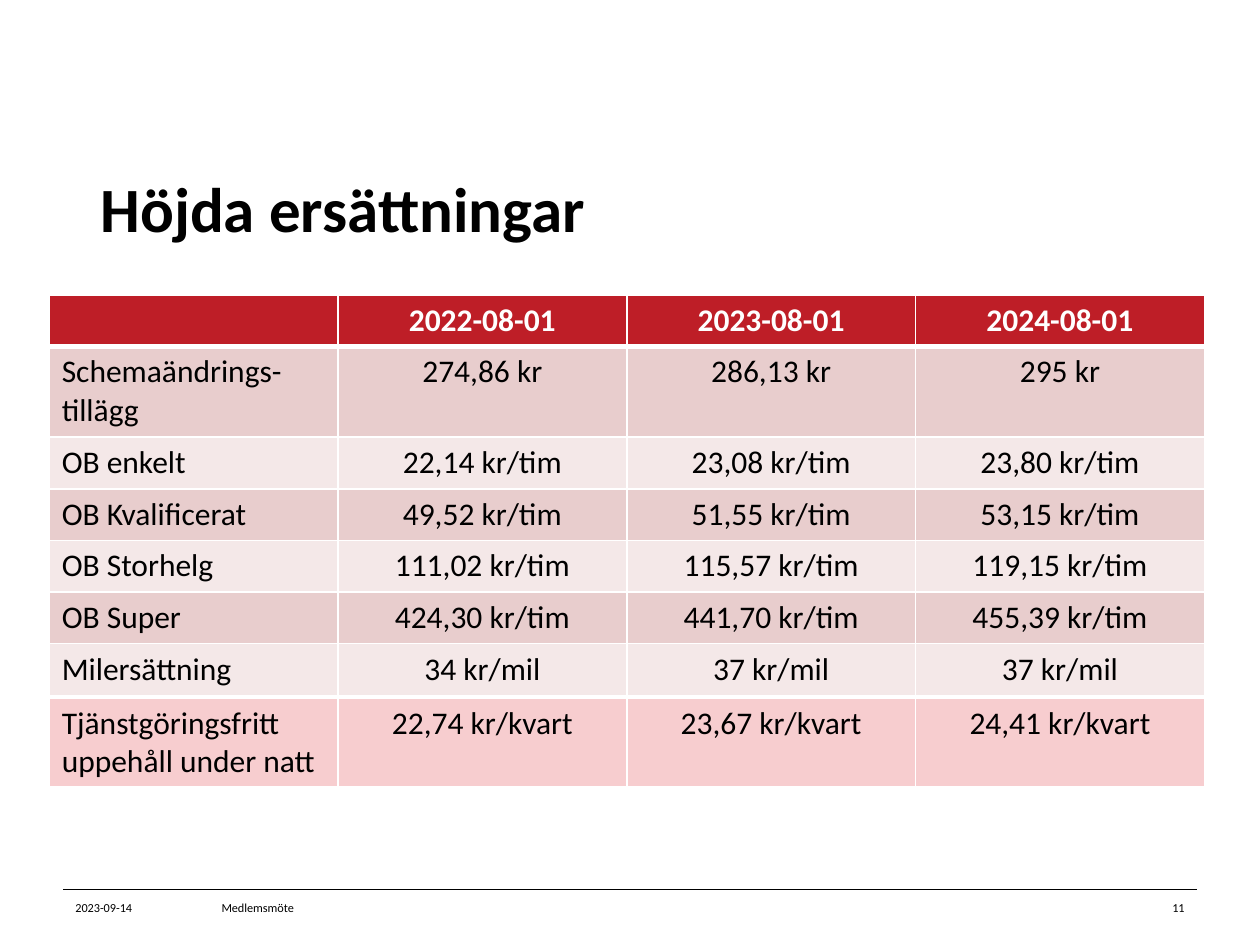
from lxml import etree
from pptx import Presentation
from pptx.dml.color import RGBColor
from pptx.enum.shapes import MSO_CONNECTOR
from pptx.enum.text import MSO_ANCHOR, PP_ALIGN
from pptx.oxml.ns import qn
from pptx.util import Inches, Pt

STRAIGHT = MSO_CONNECTOR.STRAIGHT
MIDDLE = MSO_ANCHOR.MIDDLE
LEFT, CENTER, RIGHT = PP_ALIGN.LEFT, PP_ALIGN.CENTER, PP_ALIGN.RIGHT

BLACK = RGBColor(0x00, 0x00, 0x00)
WHITE = RGBColor(0xFF, 0xFF, 0xFF)
HEADER_RED = RGBColor(0xBE, 0x1E, 0x27)
BAND_DARK = RGBColor(0xE8, 0xCD, 0xCD)
BAND_LIGHT = RGBColor(0xF4, 0xE8, 0xE8)
NIGHT_PINK = RGBColor(0xF7, 0xCD, 0xCF)

FONT = "Calibri"
TABLE_LEFT, TABLE_WIDTH = 0.39, 9.17
ROW_HEIGHT, TALL_ROW_HEIGHT = 0.41, 0.72
THIN, THICK = 1, 3

RATES = [
    ["", "2022-08-01", "2023-08-01", "2024-08-01"],
    ["Schemaändrings-tillägg", "274,86 kr", "286,13 kr", "295 kr"],
    ["OB enkelt", "22,14 kr/tim", "23,08 kr/tim", "23,80 kr/tim"],
    ["OB Kvalificerat", "49,52 kr/tim", "51,55 kr/tim", "53,15 kr/tim"],
    ["OB Storhelg", "111,02 kr/tim", "115,57 kr/tim", "119,15 kr/tim"],
    ["OB Super", "424,30 kr/tim", "441,70 kr/tim", "455,39 kr/tim"],
    ["Milersättning", "34 kr/mil", "37 kr/mil", "37 kr/mil"],
]
NIGHT_RATES = [
    ["Tjänstgöringsfritt uppehåll under natt",
     "22,74 kr/kvart", "23,67 kr/kvart", "24,41 kr/kvart"],
]


def write_text(text_frame, text, size=18, color=BLACK, bold=False,
               align=LEFT, line_spacing=None):
    paragraph = text_frame.paragraphs[0]
    paragraph.alignment = align
    if line_spacing:
        paragraph.line_spacing = Pt(line_spacing)
    paragraph.font.size = Pt(size)
    if not text:
        return
    run = paragraph.add_run()
    run.text = text
    run.font.name = FONT
    run.font.size = Pt(size)
    run.font.bold = bold
    run.font.color.rgb = color


def add_text_box(slide, left, top, width, height, text, **text_format):
    box = slide.shapes.add_textbox(
        Inches(left), Inches(top), Inches(width), Inches(height))
    box.text_frame.word_wrap = True
    box.text_frame.vertical_anchor = MIDDLE
    write_text(box.text_frame, text, **text_format)


def set_borders(cell, top, bottom):
    """Draw white cell borders; top and bottom are widths in points."""
    properties = cell._tc.get_or_add_tcPr()
    widths = {"lnL": THIN, "lnR": THIN, "lnT": top, "lnB": bottom}
    for side, width in widths.items():
        line = etree.SubElement(properties, qn(f"a:{side}"), w=str(Pt(width)))
        fill = etree.SubElement(line, qn("a:solidFill"))
        etree.SubElement(fill, qn("a:srgbClr"), val=str(WHITE))


def add_rate_table(slide, top, rows, heights, fills, has_header):
    shape = slide.shapes.add_table(
        len(rows), len(rows[0]), Inches(TABLE_LEFT), Inches(top),
        Inches(TABLE_WIDTH), Inches(sum(heights)))
    table = shape.table
    table.first_row = has_header
    table.horz_banding = False
    for row_index, row in enumerate(rows):
        table.rows[row_index].height = Inches(heights[row_index])
        is_header = has_header and row_index == 0
        below_header = has_header and row_index == 1
        for column_index, text in enumerate(row):
            cell = table.cell(row_index, column_index)
            set_borders(cell, THICK if below_header else THIN,
                        THICK if is_header else THIN)
            cell.fill.solid()
            cell.fill.fore_color.rgb = fills[row_index]
            write_text(cell.text_frame, text, bold=is_header,
                       color=WHITE if is_header else BLACK,
                       align=CENTER if column_index else LEFT)


def add_footer(slide):
    top = 7.06
    rule = slide.shapes.add_connector(
        STRAIGHT, Inches(0.5), Inches(top), Inches(9.5), Inches(top))
    rule.line.color.rgb = BLACK
    rule.line.width = Pt(0.25)
    etree.SubElement(rule._element.spPr, qn("a:effectLst"))
    for left, width, text, align in [
        (0.5, 0.96, "2023-09-14", LEFT),
        (1.66, 6.69, "Medlemsmöte", LEFT),
        (8.55, 0.95, "11", RIGHT),
    ]:
        add_text_box(slide, left, top, width, 0.29, text, size=7, align=align)


def main():
    presentation = Presentation()
    presentation.slide_width = Inches(10)
    presentation.slide_height = Inches(7.5)
    slide = presentation.slides.add_slide(presentation.slide_layouts[6])

    add_text_box(slide, 0.7, 1.1, 8.8, 1.25, "Höjda ersättningar",
                 size=36, bold=True, line_spacing=32)
    heights = [ROW_HEIGHT, TALL_ROW_HEIGHT] + [ROW_HEIGHT] * 5
    fills = [HEADER_RED] + [BAND_DARK, BAND_LIGHT] * 3
    add_rate_table(slide, 2.34, RATES, heights, fills, has_header=True)
    add_rate_table(slide, 5.54, NIGHT_RATES, [0.7], [NIGHT_PINK],
                   has_header=False)
    add_footer(slide)

    presentation.save("out.pptx")


if __name__ == "__main__":
    main()
